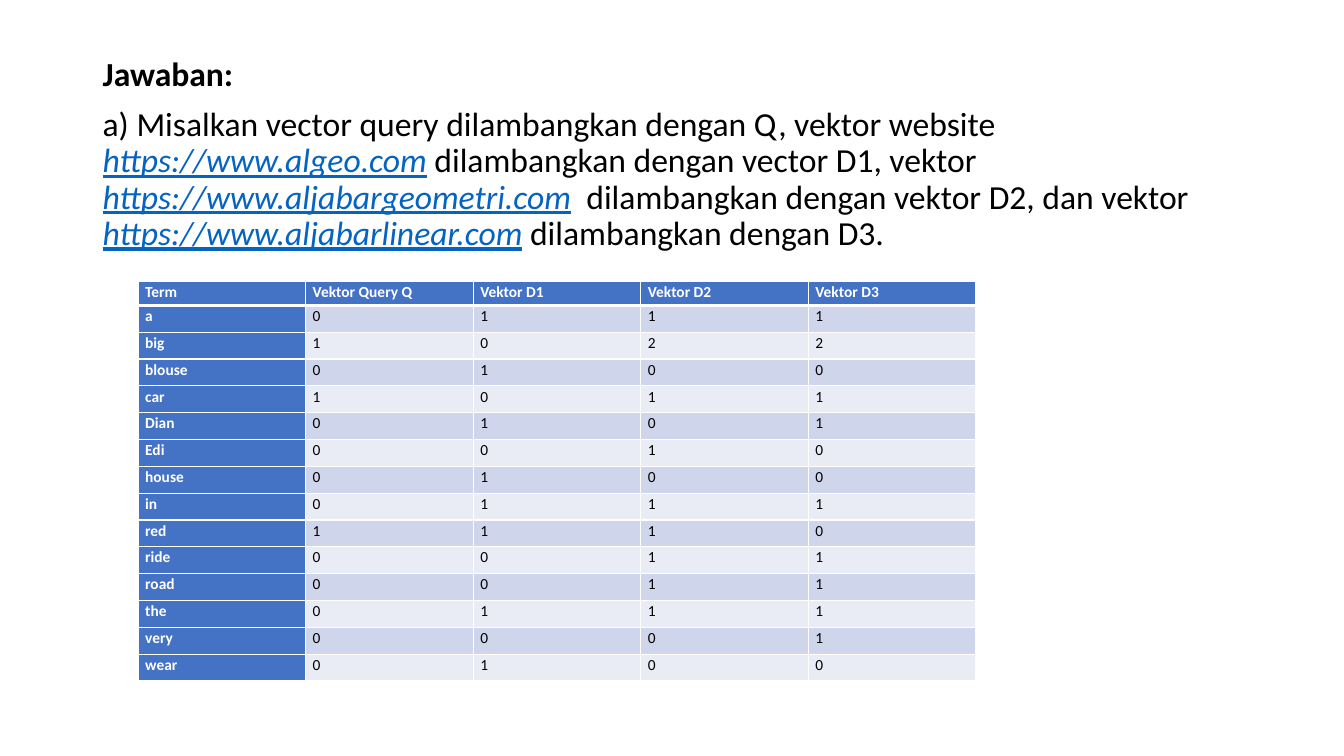
from lxml import etree
from pptx import Presentation
from pptx import util as u
from pptx.dml.color import RGBColor
from pptx.enum import text
from pptx.oxml import ns

FONT = "Calibri"
BLACK = RGBColor(0x00, 0x00, 0x00)
WHITE = RGBColor(0xFF, 0xFF, 0xFF)
LINK_BLUE = RGBColor(0x05, 0x63, 0xC1)
HEADER_BLUE = RGBColor(0x44, 0x72, 0xC4)
BAND_DARK = RGBColor(0xCF, 0xD5, 0xEA)
BAND_LIGHT = RGBColor(0xE9, 0xEB, 0xF5)

HEADERS = ["Term", "Vektor Query Q", "Vektor D1", "Vektor D2", "Vektor D3"]
TERM_COUNTS = [
    ("a", 0, 1, 1, 1),
    ("big", 1, 0, 2, 2),
    ("blouse", 0, 1, 0, 0),
    ("car", 1, 0, 1, 1),
    ("Dian", 0, 1, 0, 1),
    ("Edi", 0, 0, 1, 0),
    ("house", 0, 1, 0, 0),
    ("in", 0, 1, 1, 1),
    ("red", 1, 1, 1, 0),
    ("ride", 0, 0, 1, 1),
    ("road", 0, 0, 1, 1),
    ("the", 0, 1, 1, 1),
    ("very", 0, 0, 0, 1),
    ("wear", 0, 1, 0, 0),
]
LINK = {"color": LINK_BLUE, "italic": True, "underline": True}
ANSWER = [
    ("a) Misalkan vector query dilambangkan dengan Q, vektor website ", {}),
    ("https://www.algeo.com", LINK),
    (" ", {"italic": True}),
    ("dilambangkan dengan vector D1, vektor ", {}),
    ("https://www.aljabargeometri.com", LINK),
    (" ", {"italic": True}),
    (" dilambangkan dengan vektor D2, dan vektor ", {}),
    ("https://www.aljabarlinear.com", LINK),
    (" ", {"italic": True}),
    ("dilambangkan dengan D3.", {}),
]


def add_text(paragraph, content, size=24, color=BLACK, bold=False, italic=False, underline=False):
    """Append a formatted run to a paragraph."""
    run = paragraph.add_run()
    run.text = content
    font = run.font
    font.name, font.size, font.color.rgb = FONT, u.Pt(size), color
    font.bold, font.italic, font.underline = bold, italic, underline


def add_answer(slide, left, top, width, height):
    """Place the heading and the explanation of the vectors."""
    box = slide.shapes.add_textbox(u.Inches(left), u.Inches(top), u.Inches(width), u.Inches(height))
    frame = box.text_frame
    frame.word_wrap = True
    heading = frame.paragraphs[0]
    add_text(heading, "Jawaban:", bold=True)
    explanation = frame.add_paragraph()
    explanation.space_before = u.Pt(10)
    for content, style in ANSWER:
        add_text(explanation, content, **style)
    for paragraph in frame.paragraphs:
        paragraph.line_spacing = 0.9


def set_borders(cell, widths):
    """Draw white cell borders with widths in points keyed by side."""
    properties = cell._tc.get_or_add_tcPr()
    for side, width in widths.items():
        line = etree.SubElement(properties, ns.qn(f"a:ln{side}"), w=str(u.Pt(width)))
        fill = etree.SubElement(line, ns.qn("a:solidFill"))
        etree.SubElement(fill, ns.qn("a:srgbClr"), val=str(WHITE))


def format_cell(cell, content, row, column):
    """Fill one cell according to its place in the table."""
    is_header = row == 0 or column == 0
    set_borders(cell, {"L": 1, "R": 1, "T": 3 if row == 1 else 1, "B": 3 if row == 0 else 1})
    cell.fill.solid()
    band = BAND_DARK if row % 2 else BAND_LIGHT
    cell.fill.fore_color.rgb = HEADER_BLUE if is_header else band
    cell.margin_left = cell.margin_right = u.Inches(0.07)
    cell.margin_top = cell.margin_bottom = 0
    cell.vertical_anchor = text.MSO_ANCHOR.TOP
    paragraph = cell.text_frame.paragraphs[0]
    paragraph.line_spacing = 1.07
    add_text(paragraph, str(content), size=11, color=WHITE if is_header else BLACK, bold=is_header)


def add_term_table(slide, left, top, width, height, header_height=0.24):
    """Place the table of term counts for the query and the documents."""
    rows = [HEADERS, *TERM_COUNTS]
    frame = slide.shapes.add_table(
        len(rows), len(HEADERS), u.Inches(left), u.Inches(top), u.Inches(width), u.Inches(height)
    )
    table = frame.table
    table.first_col = True
    for column in table.columns:
        column.width = u.Inches(width / len(HEADERS))
    body_height = (height - header_height) / len(TERM_COUNTS)
    for row, values in enumerate(rows):
        table.rows[row].height = u.Inches(body_height if row else header_height)
        for column, value in enumerate(values):
            format_cell(table.cell(row, column), value, row, column)


def main():
    """Build and save the slide."""
    presentation = Presentation()
    presentation.slide_width = u.Inches(13.33)
    presentation.slide_height = u.Inches(7.5)
    slide = presentation.slides.add_slide(presentation.slide_layouts[6])
    add_answer(slide, 0.92, 0.52, 11.5, 6.09)
    add_term_table(slide, 1.37, 2.79, 8.31, 3.97)
    presentation.save("out.pptx")


if __name__ == "__main__":
    main()
